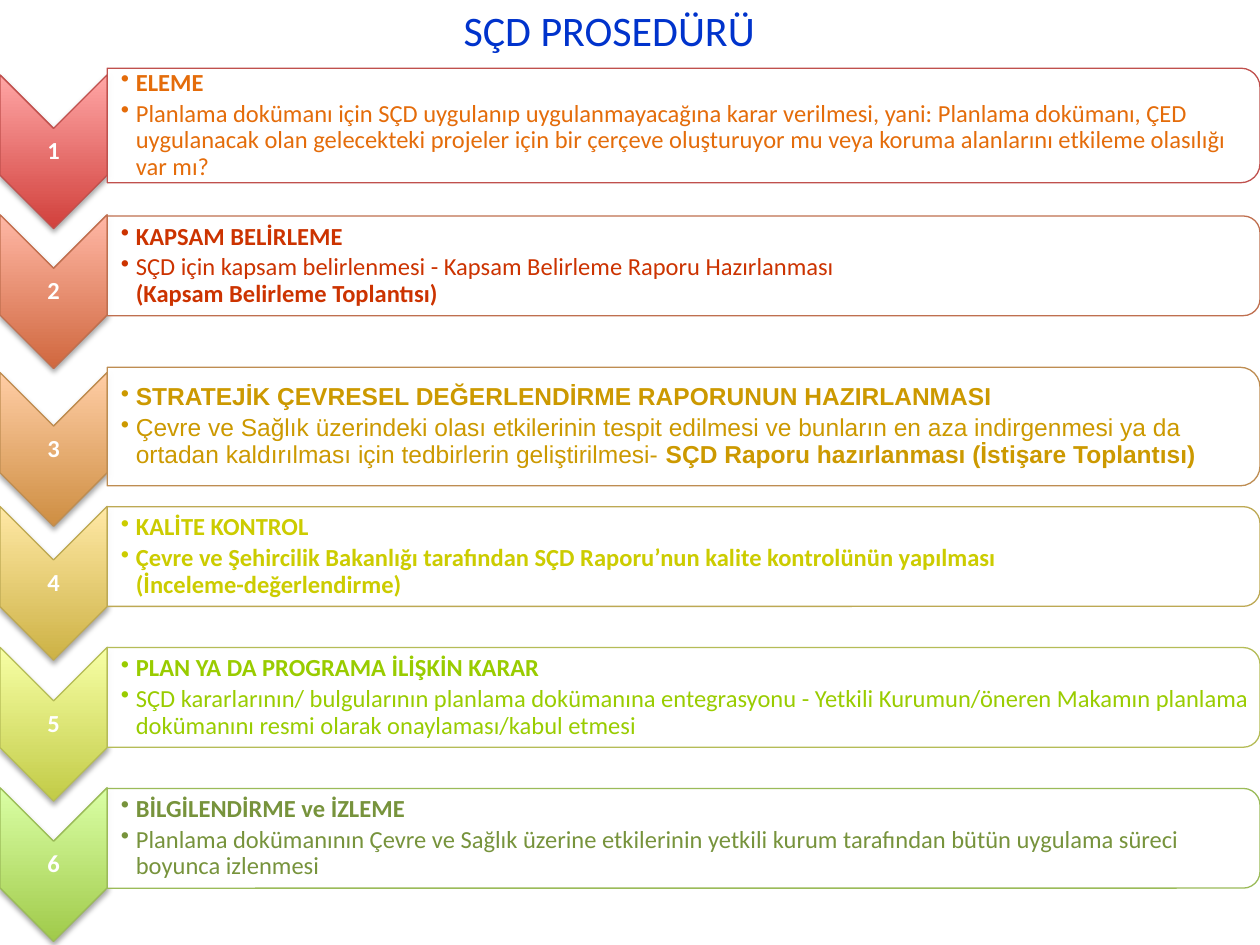
from copy import deepcopy
from dataclasses import dataclass

from lxml import etree
from pptx import Presentation
from pptx.dml.color import RGBColor
from pptx.enum.shapes import MSO_SHAPE
from pptx.enum.text import MSO_ANCHOR, PP_ALIGN
from pptx.oxml.ns import qn
from pptx.util import Cm, Pt

CHEVRON = MSO_SHAPE.CHEVRON
PANEL = MSO_SHAPE.ROUND_2_SAME_RECTANGLE
MIDDLE = MSO_ANCHOR.MIDDLE
CENTER = PP_ALIGN.CENTER
LEFT = PP_ALIGN.LEFT

SLIDE_WIDTH, SLIDE_HEIGHT = 25.4, 19.05
CHEVRON_WIDTH, CHEVRON_HEIGHT = 2.16, 3.1
PANEL_WIDTH = SLIDE_WIDTH - CHEVRON_WIDTH
NUMBER_HEIGHT = 0.94
INSET = 0.03


@dataclass(frozen=True)
class Span:
    text: str
    bold: bool = False


@dataclass(frozen=True)
class Step:
    heading: str
    details: tuple[Span, ...]
    text_color: str
    line_color: str
    dark: str
    light: str
    chevron_middle: float
    panel_middle: float
    panel_height: float = 2.01
    font: str = "Calibri"


STEPS = (
    Step("ELEME", (Span(
        "Planlama dokümanı için SÇD uygulanıp uygulanmayacağına karar verilmesi, yani: "
        "Planlama dokümanı, ÇED uygulanacak olan gelecekteki projeler için bir çerçeve "
        "oluşturuyor mu veya koruma alanlarını etkileme olasılığı var mı?"),),
        "E46C0A", "C0504D", "D1403C", "FFA6A5", 3.06, 2.53, 2.31),
    Step("KAPSAM BELİRLEME", (
        Span("SÇD için kapsam belirlenmesi - Kapsam Belirleme Raporu Hazırlanması"),
        Span("\n(Kapsam Belirleme Toplantısı)", True)),
        "CC3300", "BF6F4F", "D0683F", "FFB7A5", 5.88, 5.36),
    Step("STRATEJİK ÇEVRESEL DEĞERLENDİRME RAPORUNUN HAZIRLANMASI", (
        Span("Çevre ve Sağlık üzerindeki olası etkilerinin tespit edilmesi ve bunların en "
             "aza indirgenmesi ya da ortadan kaldırılması için tedbirlerin geliştirilmesi- "),
        Span("SÇD Raporu hazırlanması (İstişare Toplantısı)", True)),
        "CC9900", "BE8D52", "CE8E42", "FFCDA5", 9.06, 8.6, 2.39, "Arial"),
    Step("KALİTE KONTROL", (
        Span("Çevre ve Şehircilik Bakanlığı tarafından SÇD Raporu’nun kalite kontrolünün "
             "yapılması", True),
        Span("\n(İnceleme-değerlendirme)", True)),
        "CCCC00", "BDA954", "CDB245", "FFE8A5", 11.76, 11.22),
    Step("PLAN YA DA PROGRAMA İLİŞKİN KARAR", (Span(
        "SÇD kararlarının/ bulgularının planlama dokümanına entegrasyonu - Yetkili "
        "Kurumun/öneren Makamın planlama dokümanını resmi olarak onaylaması/kabul etmesi"),),
        "99CC00", "B5BC57", "C2CB47", "F7FFA5", 14.6, 14.06),
    Step("BİLGİLENDİRME ve İZLEME", (Span(
        "Planlama dokümanının Çevre ve Sağlık üzerine etkilerinin yetkili kurum tarafından "
        "bütün uygulama süreci boyunca izlenmesi"),),
        "77933C", "9BBB59", "A0CA4A", "DAFFA5", 17.43, 16.9),
)


def rgb(value: str) -> RGBColor:
    return RGBColor.from_string(value)


def add_bullet(paragraph) -> None:
    properties = paragraph._p.get_or_add_pPr()
    properties.set("marL", str(Cm(0.3)))
    properties.set("indent", str(-Cm(0.3)))
    etree.SubElement(properties, qn("a:buChar")).set("char", "•")


def write_text(shape, paragraphs, *, color: str, size: float = 14, font: str = "Calibri",
               align=LEFT, line_spacing: float = 0.9, space_after: float = 0,
               bullets: bool = False, left_inset: float = INSET,
               inset: float = INSET) -> None:
    frame = shape.text_frame
    frame.word_wrap = True
    frame.vertical_anchor = MIDDLE
    frame.margin_left = Cm(left_inset)
    frame.margin_top = frame.margin_right = frame.margin_bottom = Cm(inset)
    for index, spans in enumerate(paragraphs):
        paragraph = frame.add_paragraph() if index else frame.paragraphs[0]
        paragraph.alignment = align
        paragraph.line_spacing = line_spacing
        paragraph.space_before = Pt(0)
        paragraph.space_after = Pt(space_after)
        if bullets:
            add_bullet(paragraph)
        for span in spans:
            if span.text.startswith("\n"):
                paragraph.add_line_break()
            run = paragraph.add_run()
            run.text = span.text.lstrip("\n")
            run.font.name = font
            run.font.size = Pt(size)
            run.font.bold = span.bold
            run.font.color.rgb = rgb(color)
            for line_break in paragraph._p.findall(qn("a:br")):
                if not len(line_break):
                    line_break.append(deepcopy(run._r.rPr))


def add_rotated(slide, kind, left: float, middle: float, width: float, height: float,
                line_color: str):
    shape = slide.shapes.add_shape(
        kind, Cm(left + (width - height) / 2), Cm(middle - width / 2), Cm(height), Cm(width))
    shape.rotation = 90
    shape.shadow.inherit = False
    shape.line.color.rgb = rgb(line_color)
    shape.line.width = Pt(0.75)
    return shape


def add_text_area(slide, left: float, middle: float, width: float, height: float):
    return slide.shapes.add_textbox(
        Cm(left), Cm(middle - height / 2), Cm(width), Cm(height))


def add_drop_shadow(shape) -> None:
    effects = shape._element.spPr.find(qn("a:effectLst"))
    shadow = etree.SubElement(effects, qn("a:outerShdw"), blurRad=str(Pt(3.1)),
                              dist=str(Pt(1.8)), dir="5400000", rotWithShape="0")
    black = etree.SubElement(shadow, qn("a:srgbClr"), val="000000")
    etree.SubElement(black, qn("a:alpha"), val="35000")


def draw_chevron(slide, number: int, step: Step) -> None:
    chevron = add_rotated(slide, CHEVRON, 0, step.chevron_middle, CHEVRON_WIDTH,
                          CHEVRON_HEIGHT, step.line_color)
    chevron.fill.gradient()
    chevron.fill.gradient_angle = 90
    stops = chevron.fill.gradient_stops
    for stop, position, color in zip(stops, (0, 1), (step.dark, step.light)):
        stop.position = position
        stop.color.rgb = rgb(color)
    chevron._element.spPr.find(qn("a:gradFill")).set("rotWithShape", "0")
    add_drop_shadow(chevron)
    label = add_text_area(slide, 0, step.chevron_middle, CHEVRON_WIDTH, NUMBER_HEIGHT)
    write_text(label, [[Span(str(number), True)]], color="FFFFFF", align=CENTER)


def draw_panel(slide, step: Step) -> None:
    panel = add_rotated(slide, PANEL, CHEVRON_WIDTH, step.panel_middle, PANEL_WIDTH,
                        step.panel_height, step.line_color)
    panel.fill.solid()
    panel.fill.fore_color.rgb = rgb("FFFFFF")
    white = panel._element.spPr.find(qn("a:solidFill"))[0]
    etree.SubElement(white, qn("a:alpha"), val="90000")
    description = add_text_area(slide, CHEVRON_WIDTH, step.panel_middle,
                                PANEL_WIDTH - 0.1, step.panel_height - 0.2)
    write_text(description, [[Span(step.heading, True)], step.details],
               color=step.text_color, font=step.font, space_after=2.5, bullets=True,
               left_inset=0.28)


def main() -> None:
    presentation = Presentation()
    presentation.slide_width = Cm(SLIDE_WIDTH)
    presentation.slide_height = Cm(SLIDE_HEIGHT)
    slide = presentation.slides.add_slide(presentation.slide_layouts[5])

    for number, step in enumerate(STEPS, start=1):
        draw_chevron(slide, number, step)
        draw_panel(slide, step)

    title = slide.shapes.title
    title.left, title.top = Cm(1.78), Cm(-0.69)
    title.width, title.height = Cm(21), Cm(2.57)
    write_text(title, [[Span("SÇD PROSEDÜRÜ")]], color="0033CC", size=24, align=CENTER,
               line_spacing=1.0, left_inset=0.25, inset=0.25)

    presentation.save("out.pptx")


if __name__ == "__main__":
    main()
